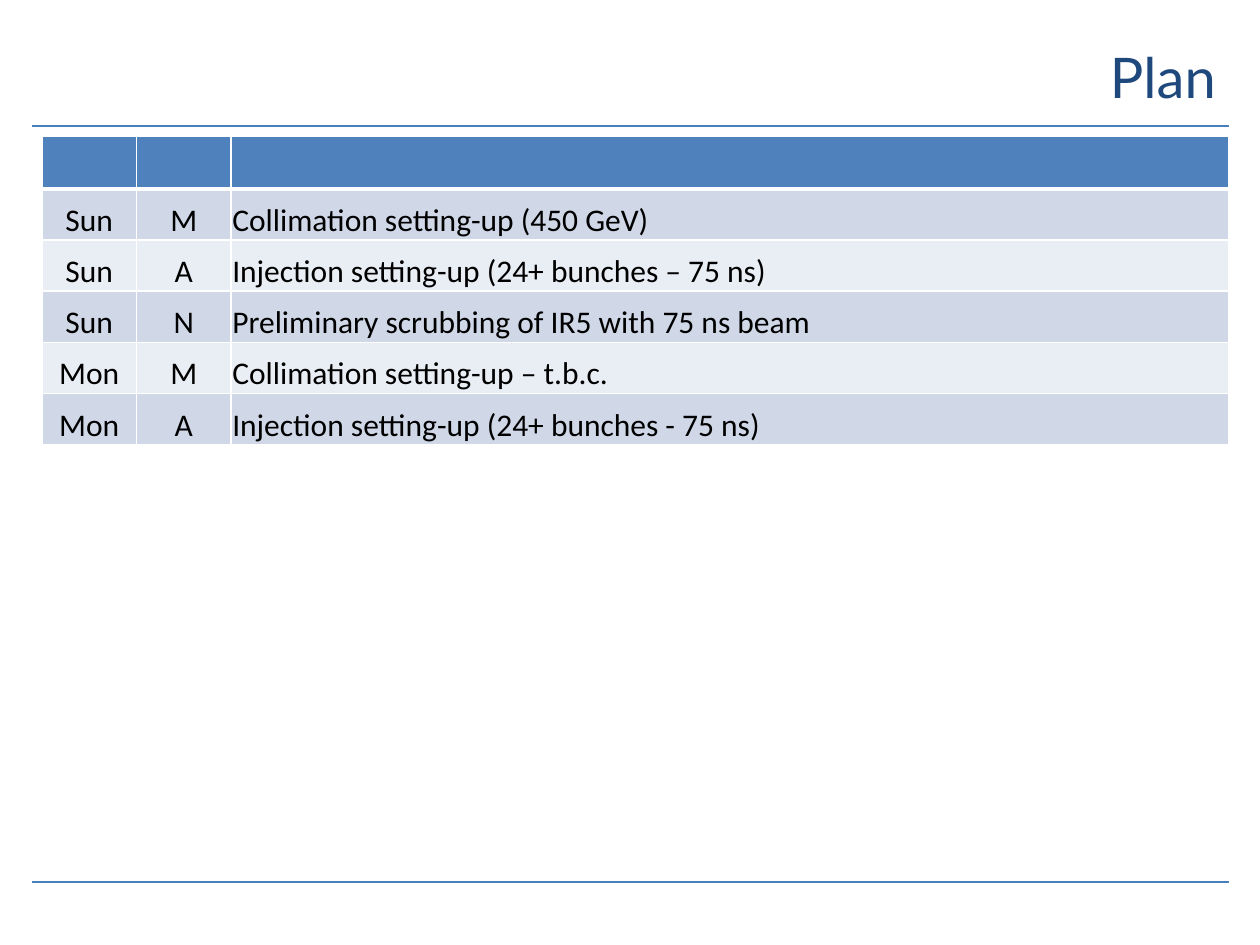
"""Build the plan slide: a title, two rules and a shift table."""
from lxml.etree import SubElement
from pptx import Presentation
from pptx.dml.color import RGBColor
from pptx.enum.shapes import MSO_CONNECTOR as Connector
from pptx.enum.text import MSO_ANCHOR as Anchor, PP_ALIGN as Align
from pptx.oxml.ns import qn
from pptx.util import Pt

RULE_BLUE = RGBColor(0x4B, 0x7E, 0xBC)
TITLE_BLUE = RGBColor(0x1F, 0x49, 0x7D)
HEADER_BLUE = RGBColor(0x4F, 0x81, 0xBD)
BAND_DARK = RGBColor(0xD0, 0xD8, 0xE8)
BAND_LIGHT = RGBColor(0xE9, 0xED, 0xF4)
BLACK = RGBColor(0, 0, 0)
WHITE = RGBColor(0xFF, 0xFF, 0xFF)

SHIFTS = [
    ("Sun", "M", "Collimation setting-up (450 GeV)"),
    ("Sun", "A", "Injection setting-up (24+ bunches – 75 ns)"),
    ("Sun", "N", "Preliminary scrubbing of IR5 with 75 ns beam"),
    ("Mon", "M", "Collimation setting-up – t.b.c."),
    ("Mon", "A", "Injection setting-up (24+ bunches - 75 ns)"),
]


def style_cell(cell, color, top, bottom):
    properties = cell._tc.get_or_add_tcPr()
    for side, width in (("L", 1), ("R", 1), ("T", top), ("B", bottom)):
        border = SubElement(properties, qn(f"a:ln{side}"), w=str(Pt(width)))
        border_fill = SubElement(border, qn("a:solidFill"))
        SubElement(border_fill, qn("a:srgbClr"), val=str(WHITE))
    cell.fill.solid()
    cell.fill.fore_color.rgb = color


presentation = Presentation()
presentation.slide_width, presentation.slide_height = Pt(720), Pt(540)
slide = presentation.slides.add_slide(presentation.slide_layouts[5])

for y in (72, 504):
    rule = slide.shapes.add_connector(Connector.STRAIGHT, Pt(18), Pt(y), Pt(702), Pt(y))
    rule.line.color.rgb = RULE_BLUE
    rule.line.width = Pt(1.5)
    SubElement(rule._element.spPr, qn("a:effectLst"))

title = slide.shapes.title
title.left, title.top, title.width, title.height = Pt(126), Pt(12), Pt(576), Pt(63)
title.text_frame.vertical_anchor = Anchor.MIDDLE
paragraph = title.text_frame.paragraphs[0]
paragraph.alignment = Align.RIGHT
run = paragraph.add_run()
run.text = "Plan"
run.font.name = "Lato"
run.font.size = Pt(32)
run.font.color.rgb = TITLE_BLUE

frame = slide.shapes.add_table(len(SHIFTS) + 1, 3, Pt(24), Pt(78), Pt(678), Pt(176))
table = frame.table
for column, width in zip(table.columns, (54, 54, 570)):
    column.width = Pt(width)
for row in table.rows:
    row.height = Pt(29.2)
table.rows[0].height = Pt(30)

for cell in table.rows[0].cells:
    style_cell(cell, HEADER_BLUE, 1, 3)

for row_index, shift in enumerate(SHIFTS, start=1):
    band = BAND_DARK if row_index % 2 else BAND_LIGHT
    for column_index, text in enumerate(shift):
        cell = table.cell(row_index, column_index)
        style_cell(cell, band, 3 if row_index == 1 else 1, 1)
        cell.vertical_anchor = Anchor.BOTTOM
        cell.margin_left = cell.margin_right = cell.margin_top = Pt(0.75)
        cell.margin_bottom = Pt(0)
        paragraph = cell.text_frame.paragraphs[0]
        paragraph.alignment = Align.LEFT if column_index == 2 else Align.CENTER
        run = paragraph.add_run()
        run.text = text
        run.font.name = "Calibri"
        run.font.size = Pt(18)
        run.font.color.rgb = BLACK

presentation.save("out.pptx")
